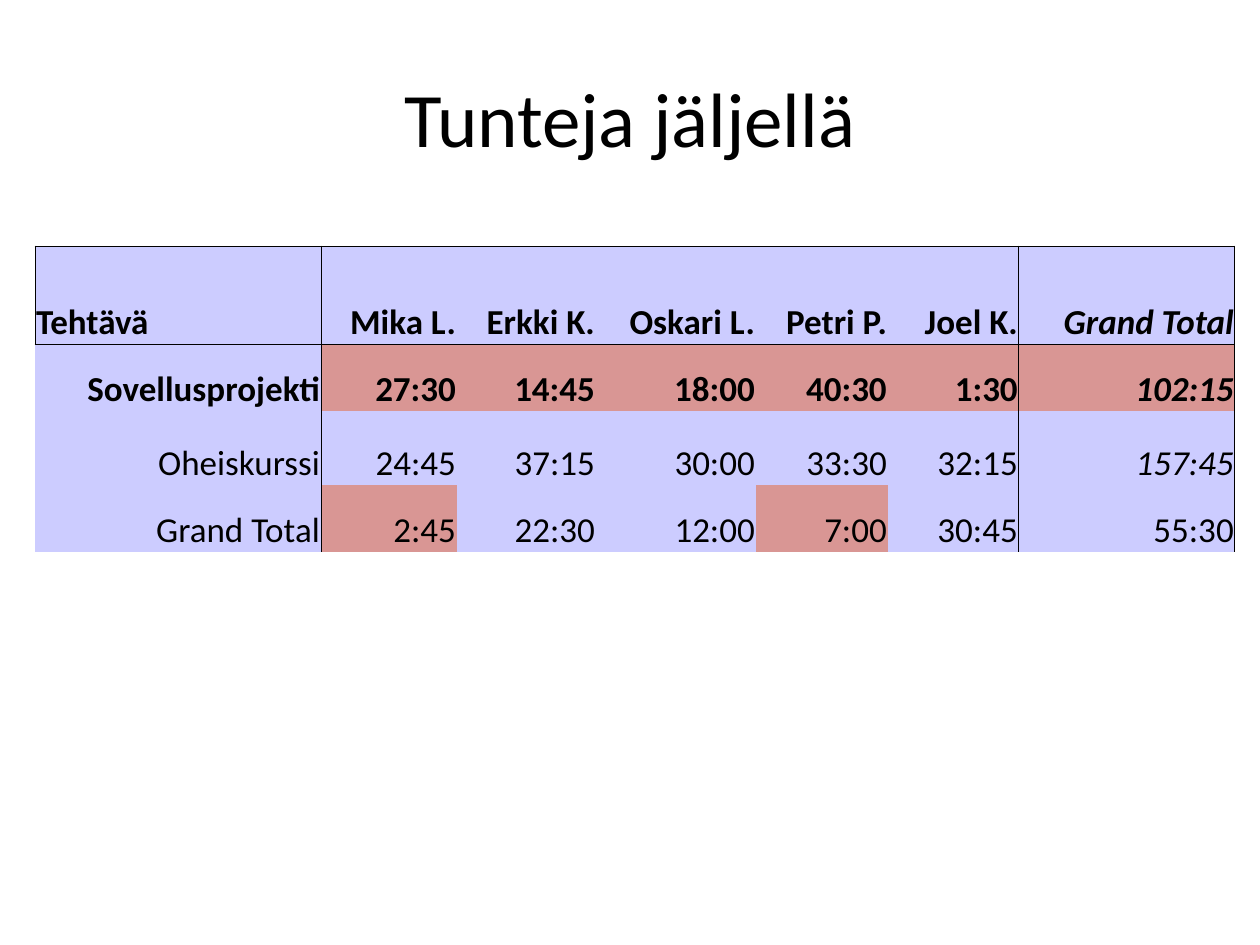
from lxml import etree
from pptx import Presentation
from pptx import util as u
from pptx.dml.color import RGBColor
from pptx.enum import text
from pptx.oxml.ns import qn

PX = 914400 // 126  # EMU per px

LILAC, RED, BLACK = "CCCCFF", "D99694", "000000"

COLS = [286, 136, 139, 160, 132, 131, 216]
ROWS = [98, 67, 74, 67]
HOURS = [
    ["Tehtävä", "Mika L.", "Erkki K.", "Oskari L.", "Petri P.", "Joel K.", "Grand Total"],
    ["Sovellusprojekti", "27:30", "14:45", "18:00", "40:30", "1:30", "102:15"],
    ["Oheiskurssi", "24:45", "37:15", "30:00", "33:30", "32:15", "157:45"],
    ["Grand Total", "2:45", "22:30", "12:00", "7:00", "30:45", "55:30"],
]
LAST_COL, LAST_ROW = len(COLS) - 1, len(ROWS) - 1


def color(value):
    return RGBColor.from_string(value)


def cell_fill(row, col):
    overdue = (row == 1 and col > 0) or (row == LAST_ROW and col in (1, 4))
    return RED if overdue else LILAC


def cell_edges(row, col):
    """Sides that carry a line, in the order the schema wants them."""
    return {
        "L": col in (1, LAST_COL) or (row, col) == (0, 0),
        "R": col in (0, LAST_COL - 1, LAST_COL),
        "T": row < 2,
        "B": row == 0,
    }


class Deck:
    font = "Calibri"

    def __init__(self, prs):
        self.s = prs.slides.add_slide(prs.slide_layouts[6])

    def style(self, p, value, size, align, bold=False, italic=False):
        p.text = value
        p.alignment = align
        f = p.font
        f.name, f.size, f.bold, f.italic = self.font, u.Pt(size), bold, italic
        f.color.rgb = color(BLACK)

    def title(self, value, *box):
        tf = self.s.shapes.add_textbox(*(n * PX for n in box)).text_frame
        tf.word_wrap = True
        tf.vertical_anchor = text.MSO_ANCHOR.MIDDLE
        self.style(tf.paragraphs[0], value, 44, text.PP_ALIGN.CENTER)

    def borders(self, cell, edges):
        tc_pr = cell._tc.get_or_add_tcPr()
        for side, drawn in edges.items():
            ln = etree.SubElement(tc_pr, qn(f"a:ln{side}"), w=str(u.Pt(0.5)))
            if drawn:
                fill = etree.SubElement(ln, qn("a:solidFill"))
                etree.SubElement(fill, qn("a:srgbClr"), val=BLACK)
            else:
                etree.SubElement(ln, qn("a:noFill"))

    def table(self, left, top):
        box = (left, top, sum(COLS), sum(ROWS))
        tbl = self.s.shapes.add_table(len(ROWS), len(COLS), *(n * PX for n in box)).table
        tbl.first_row = tbl.horz_banding = False
        for column, width in zip(tbl.columns, COLS):
            column.width = width * PX
        for r, height in enumerate(ROWS):
            tbl.rows[r].height = height * PX
            for c, value in enumerate(HOURS[r]):
                self.cell(tbl.cell(r, c), r, c, value)

    def cell(self, cell, row, col, value):
        self.borders(cell, cell_edges(row, col))
        cell.fill.solid()
        cell.fill.fore_color.rgb = color(cell_fill(row, col))
        cell.margin_left = cell.margin_right = cell.margin_top = PX
        cell.margin_bottom = 0
        cell.vertical_anchor = text.MSO_ANCHOR.BOTTOM
        align = text.PP_ALIGN.LEFT if (row, col) == (0, 0) else text.PP_ALIGN.RIGHT
        self.style(cell.text_frame.paragraphs[0], value, 20, align,
                   bold=row < 2, italic=col == LAST_COL and row < LAST_ROW)


def main():
    prs = Presentation()
    prs.slide_width, prs.slide_height = u.Inches(10), u.Inches(7.5)
    deck = Deck(prs)

    # Heading
    deck.title("Tunteja jäljellä", 63, 38, 1134, 158)

    # Hours per person and task
    deck.table(35, 246)

    prs.save("out.pptx")


if __name__ == "__main__":
    main()
